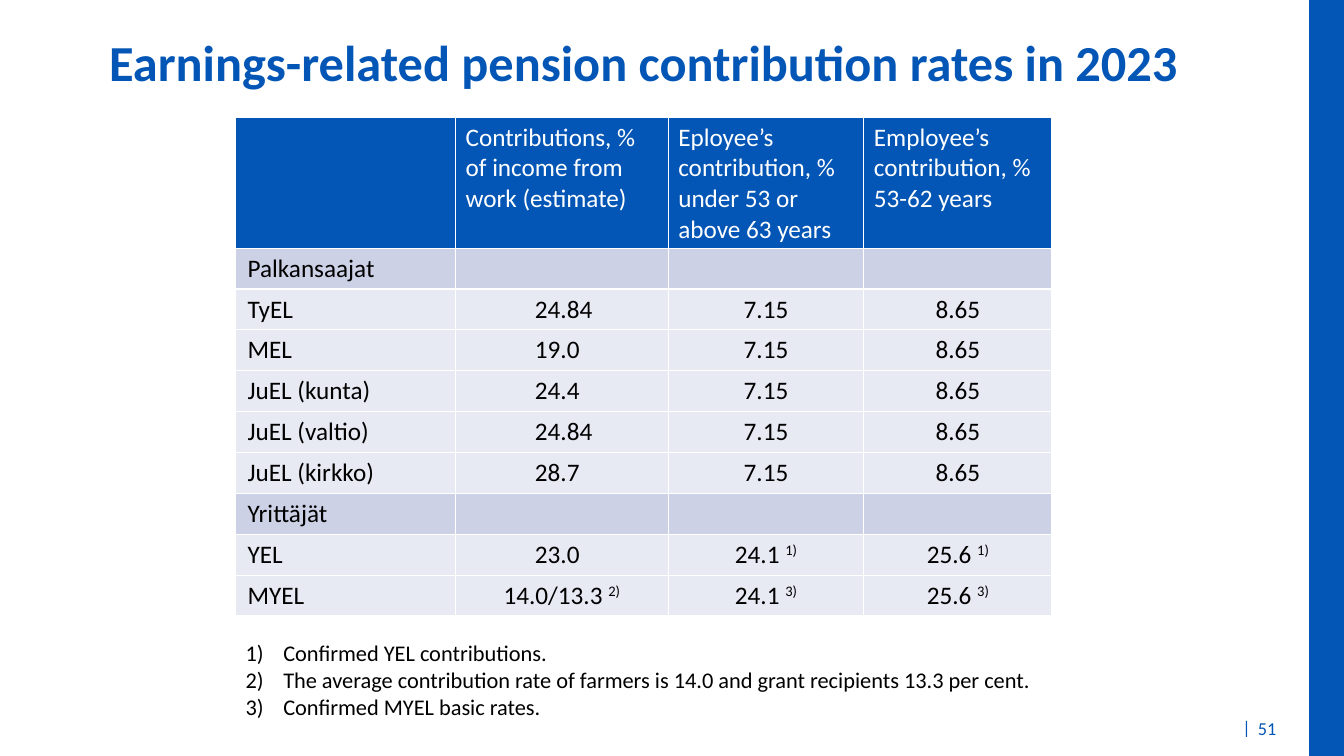
from lxml.etree import SubElement
from pptx import Presentation
from pptx.dml.color import RGBColor as Rgb
from pptx.enum.shapes import MSO_SHAPE as Shape
from pptx.enum.text import MSO_ANCHOR as Anchor, PP_ALIGN as Align
from pptx.oxml.ns import qn
from pptx.util import Cm, Pt

COLORS = {"blue": "0356B5", "white": "FFFFFF", "black": "000000",
          "group": "CCD1E5", "row": "E7E9F3"}

HEADINGS = ["", "Contributions, % of income from work (estimate)",
            "Eployee’s contribution, % under 53 or above 63 years",
            "Employee’s contribution, % 53-62 years"]
# A row with a name only is a group heading; "|" precedes a footnote mark
RATES = [
    ["Palkansaajat"],
    ["TyEL", "24.84", "7.15", "8.65"],
    ["MEL", "19.0", "7.15", "8.65"],
    ["JuEL (kunta)", "24.4", "7.15", "8.65"],
    ["JuEL (valtio)", "24.84", "7.15", "8.65"],
    ["JuEL (kirkko)", "28.7", "7.15", "8.65"],
    ["Yrittäjät"],
    ["YEL", "23.0", "24.1 |1)", "25.6 |1)"],
    ["MYEL", "14.0/13.3 |2)", "24.1 |3)", "25.6 |3)"],
]
FOOTNOTES = [
    "Confirmed YEL contributions.",
    "The average contribution rate of farmers is 14.0 and grant recipients 13.3 per cent.",
    "Confirmed MYEL basic rates.",
]


class SlideBuilder:
    font_name = "Calibri"

    def __init__(self, presentation):
        self.slide = presentation.slides.add_slide(presentation.slide_layouts[6])

    def paint(self, target, color):
        target.fill.solid()
        target.fill.fore_color.rgb = Rgb.from_string(COLORS[color])

    def add_words(self, paragraph, text, size, color, bold=False, align=Align.LEFT):
        paragraph.alignment = align
        body, _, mark = text.partition("|") if len(text) > 1 else (text, "", "")
        for part in filter(None, (body, mark)):
            run = paragraph.add_run()
            run.text = part
            formats = {"name": self.font_name, "size": Pt(size), "bold": bold}
            for name, value in formats.items():
                setattr(run.font, name, value)
            run.font.color.rgb = Rgb.from_string(COLORS[color])
            if part is mark:
                run._r.get_or_add_rPr().set("baseline", "30000")

    def bar(self, left, top, width, height, color):
        shape = self.slide.shapes.add_shape(
            Shape.RECTANGLE, Cm(left), Cm(top), Cm(width), Cm(height))
        shape.shadow.inherit = False
        self.paint(shape, color)
        shape.line.fill.background()

    def text(self, left, top, width, height, lines, size, color, bold=False,
             align=Align.LEFT, anchor=Anchor.TOP, wrap=True, numbered=False):
        box = self.slide.shapes.add_textbox(Cm(left), Cm(top), Cm(width), Cm(height))
        frame = box.text_frame
        for name, value in {"word_wrap": wrap, "vertical_anchor": anchor}.items():
            setattr(frame, name, value)
        for index, line in enumerate(lines):
            paragraph = frame.add_paragraph() if index else frame.paragraphs[0]
            if numbered:
                self.number(paragraph)
            self.add_words(paragraph, line, size, color, bold, align)

    def number(self, paragraph):
        properties = paragraph._p.get_or_add_pPr()
        properties.set("marL", str(Cm(0.95)))
        properties.set("indent", str(-Cm(0.95)))
        SubElement(properties, qn("a:buFont"), typeface="+mj-lt")
        SubElement(properties, qn("a:buAutoNum"), type="arabicParenR")

    def table(self, left, top, widths, header_height, row_height, headings, rows, size):
        height = header_height + row_height * len(rows)
        table = self.slide.shapes.add_table(
            len(rows) + 1, len(widths), Cm(left), Cm(top),
            Cm(sum(widths)), Cm(height)).table
        table.horz_banding = False
        for column, width in zip(table.columns, widths):
            column.width = Cm(width)
        for index, row in enumerate(table.rows):
            row.height = Cm(row_height if index else header_height)

        for row_index, values in enumerate([headings] + rows):
            is_header, is_group = row_index == 0, len(values) == 1
            fill = "blue" if is_header else "group" if is_group else "row"
            for column_index in range(len(widths)):
                cell = table.cell(row_index, column_index)
                self.paint(cell, fill)
                if column_index >= len(values):
                    continue
                value, align = values[column_index], Align.LEFT
                if not is_header:
                    if column_index == 0:
                        cell.margin_left = Cm(0.3)
                    elif column_index == 1 and "|" not in value:
                        cell.margin_left = Cm(2)
                    else:
                        align = Align.CENTER
                self.add_words(cell.text_frame.paragraphs[0], value, size,
                               "white" if is_header else "black", align=align)


def main():
    presentation = Presentation()
    presentation.slide_width, presentation.slide_height = Cm(33.87), Cm(19.05)
    builder = SlideBuilder(presentation)

    # Side bar and page number
    builder.bar(32.99, 0, 0.88, 19.05, "blue")
    builder.text(31.06, 17.93, 0.74, 0.89, ["|"], 13, "blue", wrap=False)
    builder.text(31.45, 17.91, 1.12, 0.89, ["51"], 13, "blue", anchor=Anchor.MIDDLE)

    # Title
    builder.text(1.52, 0.66, 29.41, 2.06,
                 ["Earnings-related pension contribution rates in 2023"],
                 36, "blue", bold=True, align=Align.CENTER)

    # Contribution rates and their footnotes
    builder.table(5.94, 2.95, [5.54, 5.36, 4.93, 4.74], 3.3, 1.03, HEADINGS, RATES, 18)
    builder.text(5.94, 15.98, 22, 2.31, FOOTNOTES, 16, "black", numbered=True)

    presentation.save("out.pptx")


if __name__ == "__main__":
    main()
